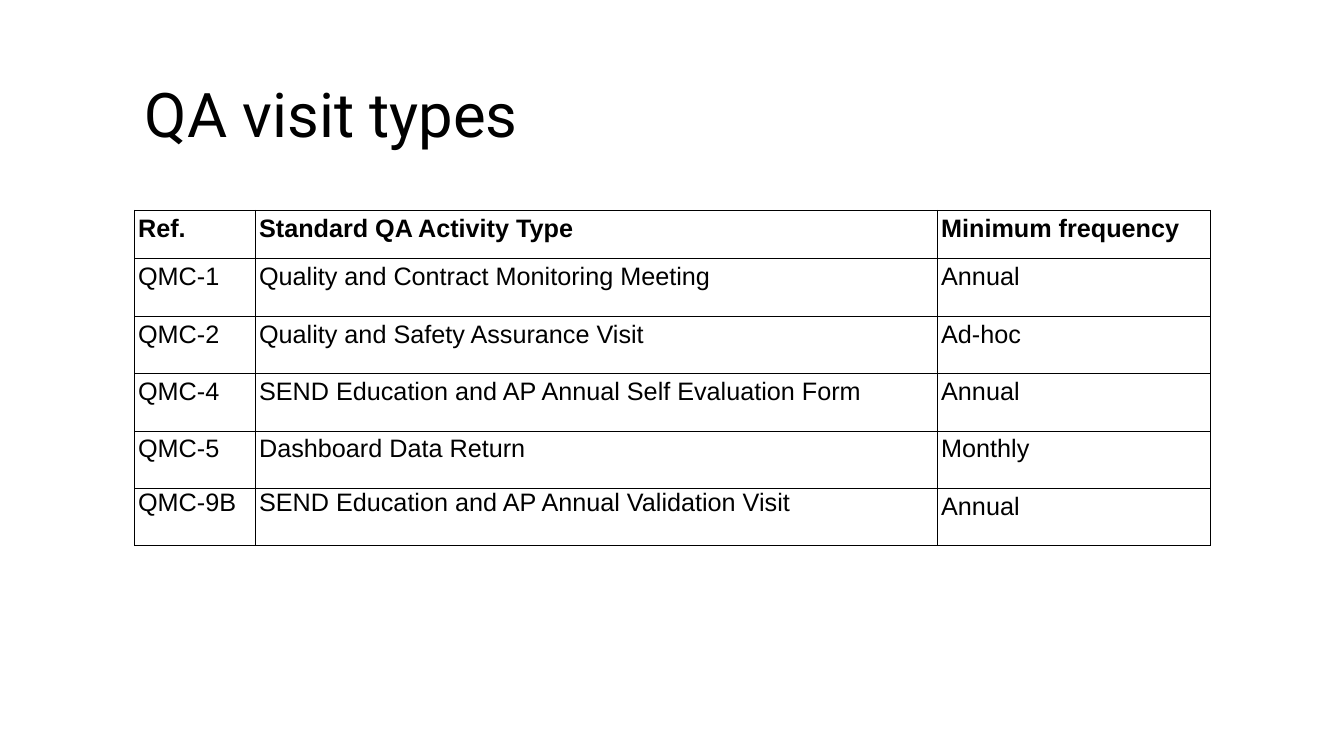
from dataclasses import dataclass

from lxml import etree
from pptx import Presentation
from pptx import util as u
from pptx.dml.color import RGBColor
from pptx.enum import text
from pptx.oxml.ns import qn


@dataclass(frozen=True)
class Theme:
    ink: str = "000000"
    title_font: str = "Roboto"
    body_font: str = "Arial"
    title_size: int = 88
    body_size: int = 36
    border_width: int = 1


theme = Theme()


def add_run(paragraph, words, font, size, bold=False):
    run = paragraph.add_run()
    run.text = words
    run.font.name = font
    run.font.size = u.Pt(size)
    run.font.bold = bold
    run.font.color.rgb = RGBColor.from_string(theme.ink)


def add_borders(cell):
    """Draw all four sides; lines must come before the fill in tcPr."""
    properties = cell._tc.get_or_add_tcPr()
    for position, side in enumerate(("lnL", "lnR", "lnT", "lnB")):
        line = etree.Element(qn(f"a:{side}"), w=str(u.Pt(theme.border_width)))
        fill = etree.SubElement(line, qn("a:solidFill"))
        etree.SubElement(fill, qn("a:srgbClr"), val=theme.ink)
        properties.insert(position, line)


deck = Presentation()
deck.slide_width = u.Inches(26.66)
deck.slide_height = u.Inches(15)
slide = deck.slides.add_slide(deck.slide_layouts[5])

# Title
title = slide.shapes.title
title.left, title.top = u.Inches(2.67), u.Inches(0.88)
title.width, title.height = u.Inches(21.37), u.Inches(2.9)
heading = title.text_frame
heading.auto_size = text.MSO_AUTO_SIZE.NONE
heading.word_wrap = True
heading.vertical_anchor = text.MSO_ANCHOR.MIDDLE
heading.margin_left = heading.margin_right = u.Inches(0.2)
heading.margin_top = heading.margin_bottom = u.Inches(0.1)
heading.paragraphs[0].alignment = text.PP_ALIGN.LEFT
heading.paragraphs[0].line_spacing = 0.9
add_run(heading.paragraphs[0], "QA visit types", theme.title_font, theme.title_size)

# Table of visit types
visits = [
    ("Ref.", "Standard QA Activity Type", "Minimum frequency"),
    ("QMC-1", "Quality and Contract Monitoring Meeting", "Annual"),
    ("QMC-2", "Quality and Safety Assurance Visit", "Ad-hoc"),
    ("QMC-4", "SEND Education and AP Annual Self Evaluation Form", "Annual"),
    ("QMC-5", "Dashboard Data Return", "Monthly"),
    ("QMC-9B", "SEND Education and AP Annual Validation Visit", "Annual"),
]
column_widths = (2.4, 13.53, 5.4)
header_height, visit_height = 0.96, 1.14
single_spaced = {(5, 0), (5, 1)}

visit_table = slide.shapes.add_table(
    len(visits), len(column_widths), u.Inches(2.67), u.Inches(4.17),
    u.Inches(sum(column_widths)),
    u.Inches(header_height + visit_height * (len(visits) - 1)),
).table
visit_table.first_row = False
visit_table.horz_banding = False
for column, width in zip(visit_table.columns, column_widths):
    column.width = u.Inches(width)

for r, visit in enumerate(visits):
    visit_table.rows[r].height = u.Inches(visit_height if r else header_height)
    for c, words in enumerate(visit):
        cell = visit_table.cell(r, c)
        cell.fill.background()
        cell.margin_left = cell.margin_right = u.Inches(0.07)
        cell.margin_top = cell.margin_bottom = 0
        add_borders(cell)
        paragraph = cell.text_frame.paragraphs[0]
        if (r, c) not in single_spaced:
            paragraph.alignment = text.PP_ALIGN.JUSTIFY
            paragraph.line_spacing = 1.15
        add_run(paragraph, words, theme.body_font, theme.body_size, bold=r == 0)

deck.save("out.pptx")
